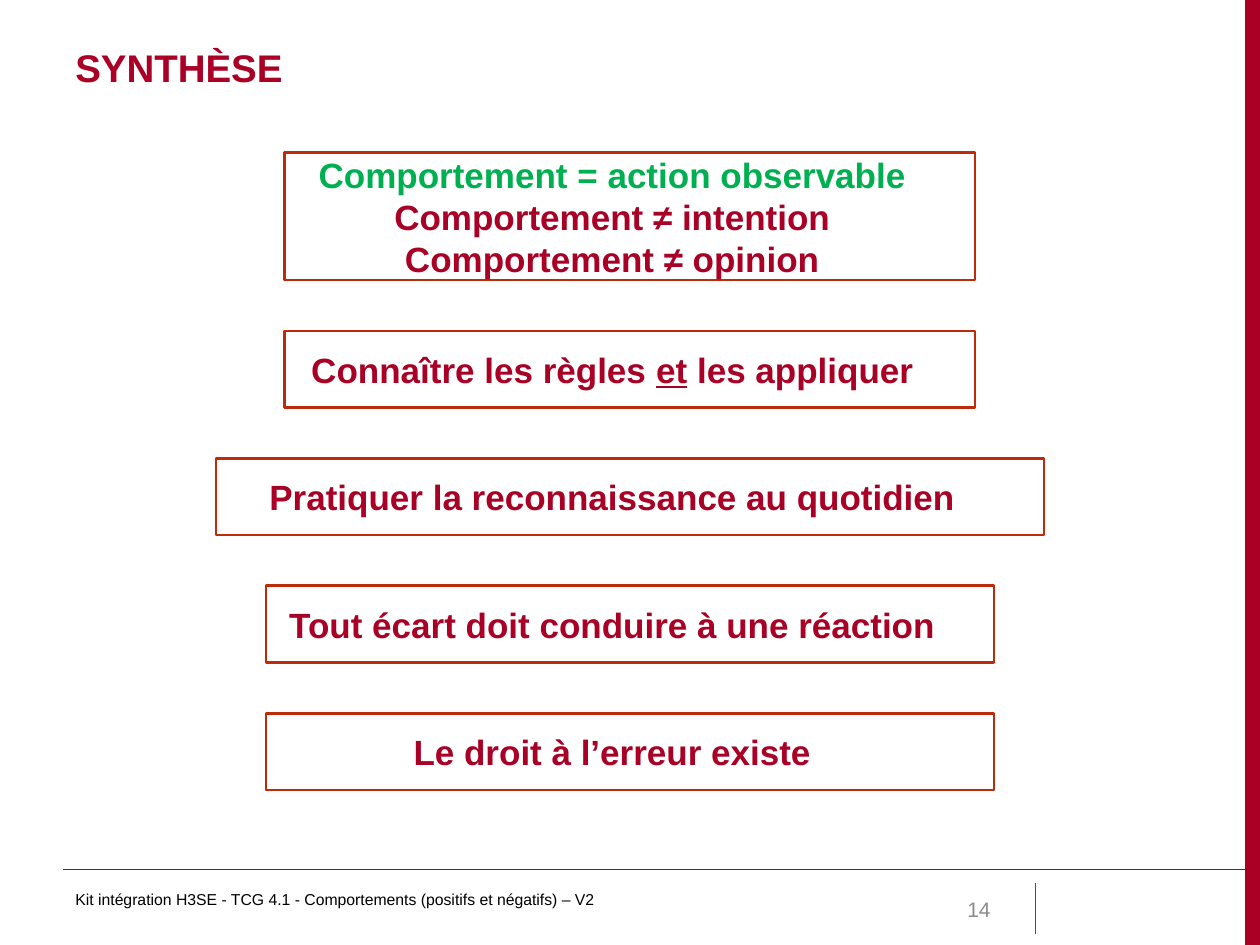
from dataclasses import dataclass

from lxml.etree import SubElement
from pptx import Presentation
from pptx.dml.color import RGBColor
from pptx.enum.shapes import MSO_CONNECTOR as Connector, MSO_SHAPE as Preset
from pptx.enum.text import MSO_ANCHOR as Anchor, PP_ALIGN as Align
from pptx.oxml.ns import qn
from pptx.util import Cm, Pt

COLORS = {
    "band": "AA0025",
    "message": "A90025",
    "highlight": "00B050",
    "border": "BD2B0B",
    "white": "FFFFFF",
    "black": "000000",
    "separator": "4D4D4D",
    "number": "8C8C8C",
}
FONT = "Arial"
SLIDE_WIDTH, SLIDE_HEIGHT = 25.4, 19.05
BAND_WIDTH = 0.3
MARGIN = 1.27
FOOTER_TOP, FOOTER_HEIGHT = 17.81, 1.02
FIRST_TOP, GAP = 3.08, 1.02


@dataclass(frozen=True)
class Line:
    segments: tuple[str, ...]
    color: str = "message"
    underlined: str = ""


@dataclass(frozen=True)
class Message:
    width: float
    height: float
    lines: tuple[Line, ...]


@dataclass(frozen=True)
class Label:
    text: str
    left: float
    top: float
    width: float
    height: float
    size: float
    color: str
    bold: bool = False
    align: Align = Align.LEFT
    anchor: Anchor = Anchor.TOP


@dataclass(frozen=True)
class Rule:
    start: tuple[float, float]
    end: tuple[float, float]
    color: str
    weight: float


MESSAGES = (
    Message(13.92, 2.57, (
        Line(("Comportement = action observable",), "highlight"),
        Line(("Comportement ≠ intention",)),
        Line(("Comportement ≠ opinion",)),
    )),
    Message(13.92, 1.55, (
        Line(("Connaître les règles ", "et", " les appliquer"), underlined="et"),
    )),
    Message(16.69, 1.55, (Line(("Pratiquer la reconnaissance au quotidien",)),)),
    Message(14.68, 1.55, (Line(("Tout écart doit conduire à une réaction",)),)),
    Message(14.68, 1.55, (Line(("Le droit à l’erreur existe",)),)),
)
LABELS = (
    Label("SYNTHÈSE", MARGIN, 0.76, 22.83, 1.75, 22, "band", bold=True),
    Label("14", 18.21, FOOTER_TOP, 2.01, FOOTER_HEIGHT, 12, "number",
          align=Align.RIGHT, anchor=Anchor.MIDDLE),
    Label("Kit intégration H3SE - TCG 4.1 - Comportements (positifs et négatifs) – V2",
          MARGIN, FOOTER_TOP, 15.44, FOOTER_HEIGHT, 9, "black"),
)
RULES = (
    Rule((MARGIN, 17.53), (SLIDE_WIDTH, 17.53), "band", 0.75),
    Rule((20.88, FOOTER_TOP), (20.88, FOOTER_TOP + FOOTER_HEIGHT), "separator", 0.5),
)


def rgb(name: str) -> RGBColor:
    return RGBColor.from_string(COLORS[name])


def style(paragraph, size: float, color: str, bold: bool, align: Align) -> None:
    paragraph.alignment = align
    font = paragraph.font
    font.name, font.size, font.bold = FONT, Pt(size), bold
    font.color.rgb = rgb(color)


def draw_rectangle(slide, left: float, top: float, width: float, height: float, fill: str):
    shape = slide.shapes.add_shape(
        Preset.RECTANGLE, Cm(left), Cm(top), Cm(width), Cm(height))
    shape.shadow.inherit = False
    shape.fill.solid()
    shape.fill.fore_color.rgb = rgb(fill)
    shape.line.fill.background()
    return shape


def draw_rule(slide, rule: Rule) -> None:
    connector = slide.shapes.add_connector(
        Connector.STRAIGHT, *(Cm(value) for value in rule.start + rule.end))
    connector.line.color.rgb = rgb(rule.color)
    connector.line.width = Pt(rule.weight)
    SubElement(connector._element.spPr, qn("a:effectLst"))


def draw_label(slide, label: Label) -> None:
    box = slide.shapes.add_textbox(
        Cm(label.left), Cm(label.top), Cm(label.width), Cm(label.height))
    frame = box.text_frame
    frame.word_wrap = True
    frame.vertical_anchor = label.anchor
    paragraph = frame.paragraphs[0]
    paragraph.text = label.text
    style(paragraph, label.size, label.color, label.bold, label.align)


def draw_message(slide, message: Message, top: float) -> None:
    left = (SLIDE_WIDTH - message.width) / 2
    shape = draw_rectangle(slide, left, top, message.width, message.height, "white")
    shape.line.color.rgb = rgb("border")
    shape.line.width = Pt(1.5)
    frame = shape.text_frame
    frame.word_wrap = True
    frame.vertical_anchor = Anchor.MIDDLE
    frame.margin_left = frame.margin_top = frame.margin_bottom = 0
    frame.margin_right = Cm(0.71)
    for index, line in enumerate(message.lines):
        paragraph = frame.add_paragraph() if index else frame.paragraphs[0]
        for segment in line.segments:
            run = paragraph.add_run()
            run.text = segment
            if segment == line.underlined:
                run.font.underline = True
        style(paragraph, 20, line.color, True, Align.CENTER)


def main() -> None:
    presentation = Presentation()
    presentation.slide_width = Cm(SLIDE_WIDTH)
    presentation.slide_height = Cm(SLIDE_HEIGHT)
    slide = presentation.slides.add_slide(presentation.slide_layouts[6])

    draw_rectangle(slide, SLIDE_WIDTH - BAND_WIDTH, 0, BAND_WIDTH, SLIDE_HEIGHT, "band")
    for rule in RULES:
        draw_rule(slide, rule)
    for label in LABELS:
        draw_label(slide, label)
    top = FIRST_TOP
    for message in MESSAGES:
        draw_message(slide, message, top)
        top += message.height + GAP

    presentation.save("out.pptx")


if __name__ == "__main__":
    main()
